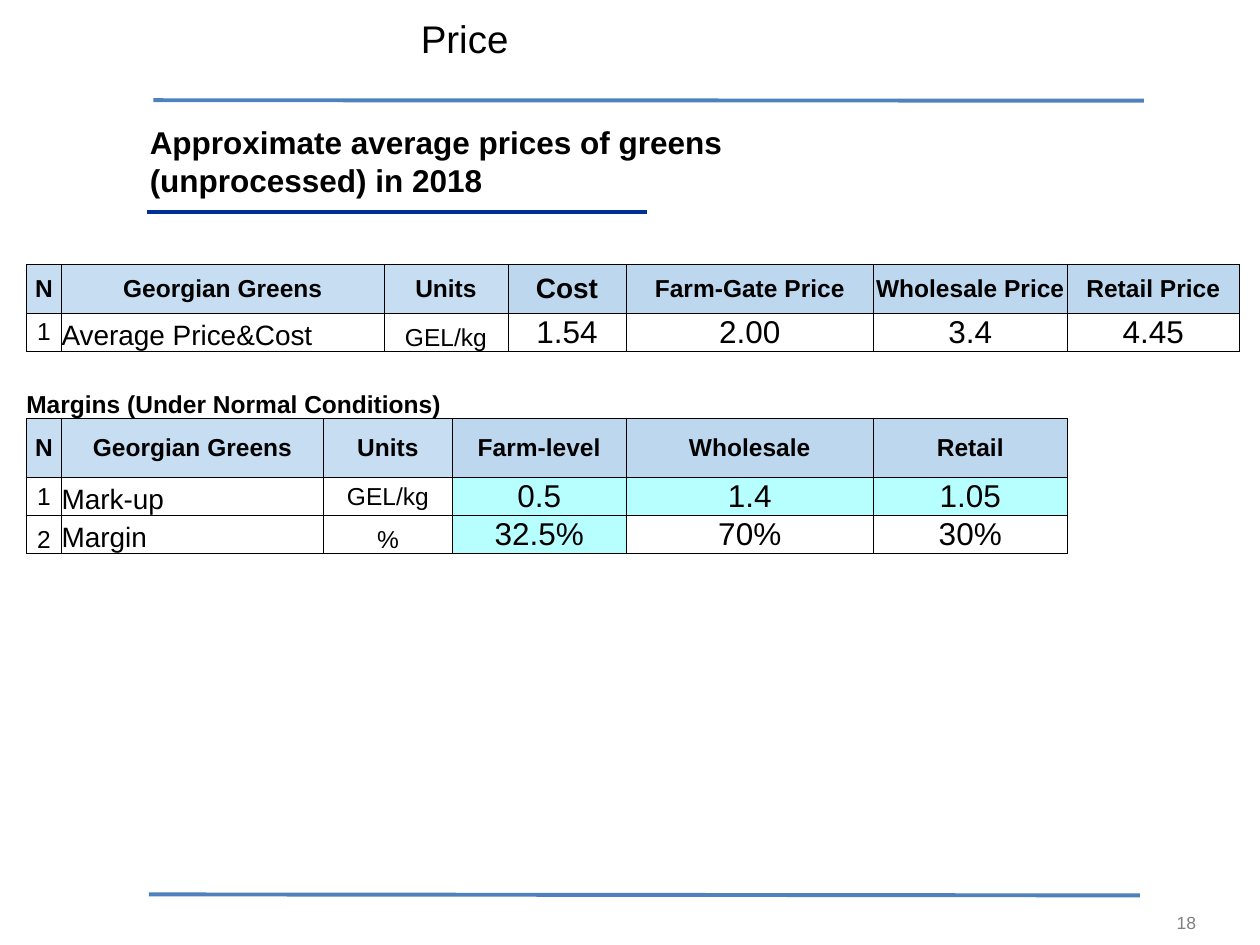
from lxml.etree import SubElement
from pptx import Presentation
from pptx.dml.color import RGBColor
from pptx.enum.shapes import MSO_CONNECTOR as Connector
from pptx.enum.text import MSO_ANCHOR as Anchor, PP_ALIGN as Align
from pptx.oxml.ns import qn
from pptx.util import Cm, Pt

BLACK = RGBColor(0x00, 0x00, 0x00)
GREY = RGBColor(0x80, 0x80, 0x80)
RULE_BLUE = RGBColor(0x4F, 0x81, 0xBD)
NAVY = RGBColor(0x00, 0x31, 0x92)
PALE_BLUE = RGBColor(0xC7, 0xDD, 0xF1)
SKY_BLUE = RGBColor(0xBD, 0xD7, 0xEE)
AQUA = RGBColor(0xB7, 0xFF, 0xFF)
FONT = "Arial"
NO_STYLE = "{2D5ABB26-0587-4C30-8999-92F81FD0307C}"

RULES = [
    (3.09, 2.02, 23.06, 2.03, RULE_BLUE),
    (3.0, 18.03, 22.98, 18.05, RULE_BLUE),
    (2.97, 4.27, 13.05, 4.27, NAVY),
]

COLUMN_WIDTHS = [0.71, 5.28, 1.22, 1.38, 1.12, 2.38, 4.99, 3.9, 3.48]
ROW_HEIGHTS = [0.99, 0.71, 0.75, 0.61, 1.19, 0.71, 0.71]

STYLES = {
    "key": dict(size=14, bold=True, fill=PALE_BLUE),
    "head": dict(size=14, bold=True, fill=SKY_BLUE),
    "cost": dict(size=16, bold=True, fill=SKY_BLUE),
    "small": dict(size=14),
    "low": dict(size=14, anchor=Anchor.BOTTOM),
    "label": dict(size=16, align=Align.LEFT, anchor=Anchor.BOTTOM),
    "value": dict(size=18),
    "marked": dict(size=18, fill=AQUA),
    "caption": dict(size=14, bold=True, align=Align.LEFT,
                    anchor=Anchor.BOTTOM, border=False),
    "gap": dict(size=14, border=False),
}

PRICE_SPANS = [1, 2, 2, 1, 1, 1, 1]
MARGIN_SPANS = [1, 1, 2, 2, 1, 1, 1]
TABLE_ROWS = [
    (PRICE_SPANS, [("N", "key"), ("Georgian Greens", "key"), ("Units", "key"),
                   ("Cost", "cost"), ("Farm-Gate Price", "head"),
                   ("Wholesale Price", "head"), ("Retail Price", "head")]),
    (PRICE_SPANS, [("1", "small"), ("Average Price&Cost", "label"),
                   ("GEL/kg", "low"), ("1.54", "value"), ("2.00", "value"),
                   ("3.4", "value"), ("4.45", "value")]),
    (PRICE_SPANS, [("", "gap")] * 7),
    ([6, 1, 1, 1], [("Margins (Under Normal Conditions)", "caption")]
     + [("", "gap")] * 3),
    (MARGIN_SPANS, [("N", "key"), ("Georgian Greens", "key"), ("Units", "key"),
                    ("Farm-level", "head"), ("Wholesale", "head"),
                    ("Retail", "head"), ("", "gap")]),
    (MARGIN_SPANS, [("1", "small"), ("Mark-up", "label"), ("GEL/kg", "small"),
                    ("0.5", "marked"), ("1.4", "marked"), ("1.05", "marked"),
                    ("", "gap")]),
    (MARGIN_SPANS, [("2", "low"), ("Margin", "label"), ("%", "low"),
                    ("32.5%", "marked"), ("70%", "value"), ("30%", "value"),
                    ("", "gap")]),
]


def write(frame, text, size, color=BLACK, bold=False, align=Align.LEFT):
    paragraph = frame.paragraphs[0]
    paragraph.alignment = align
    if text:
        run = paragraph.add_run()
        run.text = text
        run.font.color.rgb = color
        for name, value in dict(name=FONT, size=Pt(size), bold=bold).items():
            setattr(run.font, name, value)
    ending = paragraph._p.get_or_add_endParaRPr()
    ending.set("sz", str(size * 100))
    SubElement(ending, qn("a:latin"), typeface=FONT)


def place(shape, left, top, width, height):
    box = dict(left=left, top=top, width=width, height=height)
    for name, value in box.items():
        setattr(shape, name, Cm(value))


def add_box(slide, box, text, anchor=Anchor.TOP, **font):
    frame = slide.shapes.add_textbox(*map(Cm, box)).text_frame
    frame.word_wrap = True
    frame.vertical_anchor = anchor
    write(frame, text, **font)


def add_rule(slide, x1, y1, x2, y2, color):
    rule = slide.shapes.add_connector(
        Connector.STRAIGHT, Cm(x1), Cm(y1), Cm(x2), Cm(y2))
    rule.line.color.rgb = color
    rule.line.width = Pt(2.25)
    SubElement(rule._element.spPr, qn("a:effectLst"))


def add_borders(cell):
    properties = cell._tc.get_or_add_tcPr()
    for side in ("a:lnL", "a:lnR", "a:lnT", "a:lnB"):
        edge = SubElement(properties, qn(side), w=str(Pt(0.5)))
        SubElement(SubElement(edge, qn("a:solidFill")), qn("a:srgbClr"),
                   val=str(BLACK))


def fill_cell(cells, text, size, fill=None, border=True,
              anchor=Anchor.MIDDLE, align=Align.CENTER, bold=False):
    for cell in cells:
        for side in ("left", "right", "top", "bottom"):
            setattr(cell, f"margin_{side}", 0)
        if border:
            add_borders(cell)
        if fill is None:
            cell.fill.background()
        else:
            cell.fill.solid()
            cell.fill.fore_color.rgb = fill
        cell.vertical_anchor = anchor
        write(cell.text_frame, text if cell is cells[0] else "", size,
              bold=bold, align=align)
    if len(cells) > 1:
        cells[0].merge(cells[-1])


def add_price_table(slide):
    table = slide.shapes.add_table(
        len(ROW_HEIGHTS), len(COLUMN_WIDTHS), Cm(0.53), Cm(5.33),
        Cm(sum(COLUMN_WIDTHS)), Cm(sum(ROW_HEIGHTS))).table
    table.first_row = table.horz_banding = False
    table._tbl.tblPr.find(qn("a:tableStyleId")).text = NO_STYLE
    for column, width in zip(table.columns, COLUMN_WIDTHS):
        column.width = Cm(width)
    for r, (spans, entries) in enumerate(TABLE_ROWS):
        table.rows[r].height = Cm(ROW_HEIGHTS[r])
        start = 0
        for span, (text, style) in zip(spans, entries):
            cells = [table.cell(r, c) for c in range(start, start + span)]
            fill_cell(cells, text, **STYLES[style])
            start += span


def main():
    deck = Presentation()
    deck.slide_width, deck.slide_height = Cm(25.4), Cm(19.05)
    slide = deck.slides.add_slide(deck.slide_layouts[5])

    title = slide.shapes.title
    place(title, 8.23, 0, 16.76, 1.65)
    title.text_frame.vertical_anchor = Anchor.MIDDLE
    title.text_frame.paragraphs[0].line_spacing = 0.9
    write(title.text_frame, "Price", 22)

    for rule in RULES:
        add_rule(slide, *rule)
    add_box(slide, (21.77, 18.08, 2.59, 1.02), "18", Anchor.MIDDLE,
            size=10, color=GREY, align=Align.RIGHT)
    add_price_table(slide)
    add_box(slide, (2.77, 2.36, 13.94, 1.8),
            "Approximate average prices of greens (unprocessed) in 2018",
            size=18, bold=True)
    deck.save("out.pptx")


if __name__ == "__main__":
    main()
